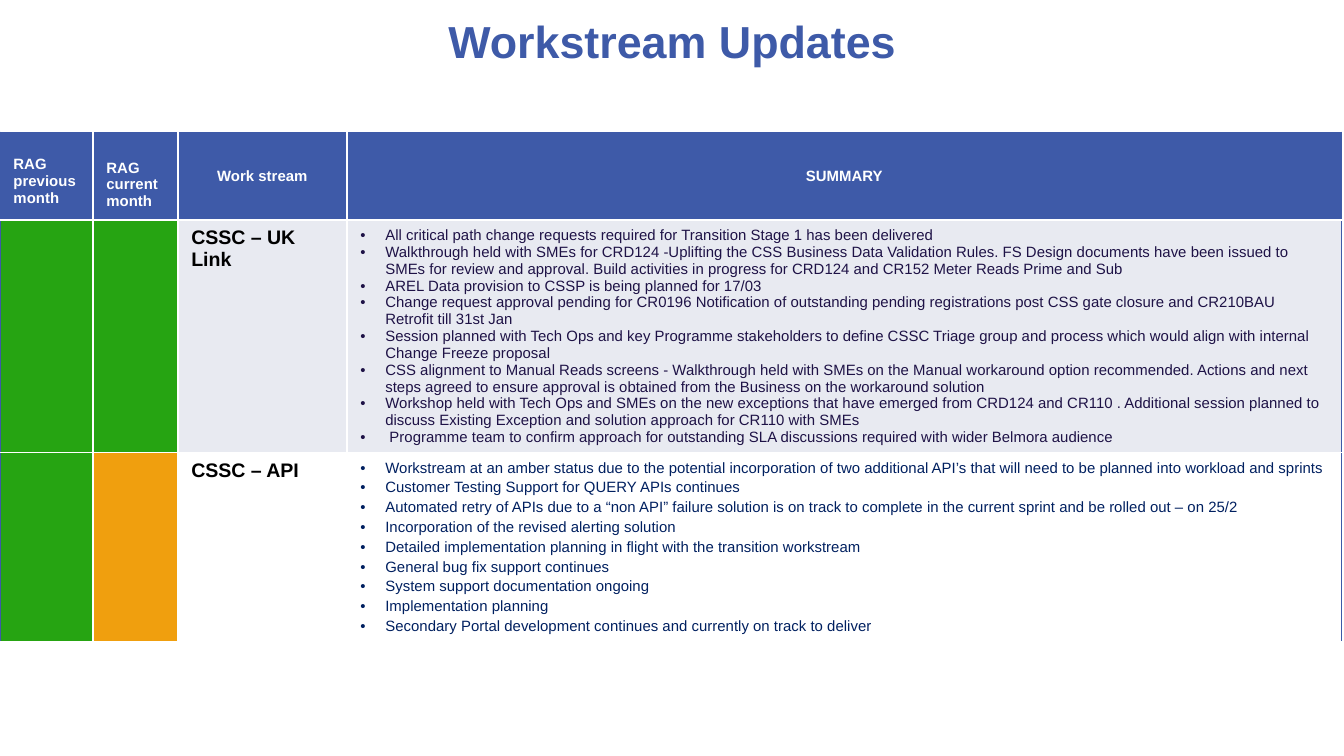
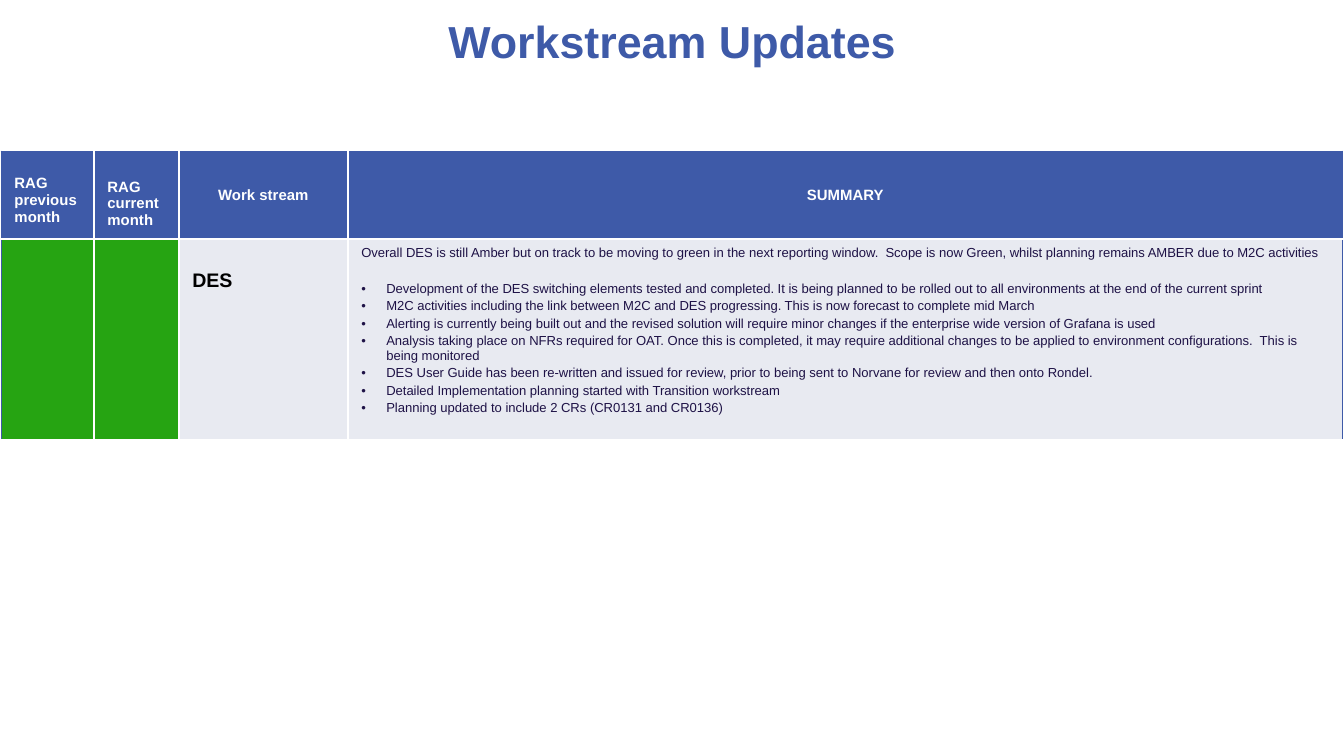
from dataclasses import dataclass

from lxml import etree
from pptx import Presentation
from pptx.dml.color import RGBColor
from pptx.enum import text
from pptx.oxml import ns
from pptx.util import Pt

TITLE = "Workstream Updates"
HEADINGS = ["RAG previous month", "RAG\ncurrent month", "Work stream", "SUMMARY"]

SLIDES = [
    {
        "corner": (0, 132),
        "rows": [
            {
                "height": 232, "rag": ("green", "green"), "name": "CSSC – UK Link",
                "fill": "band", "colour": "ink", "size": 8, "gap": 0,
                "bullets": [
                    "All critical path change requests required for Transition Stage 1 has been delivered",
                    "Walkthrough held with SMEs for CRD124 -Uplifting the CSS Business Data Validation Rules. "
                    "FS Design documents have been issued to SMEs for review and approval. "
                    "Build activities in progress for CRD124 and CR152 Meter Reads Prime and Sub",
                    "AREL Data provision to CSSP is being planned for 17/03",
                    "Change request approval pending for CR0196 Notification of outstanding pending "
                    "registrations post CSS gate closure and CR210BAU Retrofit till 31st Jan",
                    "Session planned with Tech Ops and key Programme stakeholders to define CSSC Triage "
                    "group and process which would align with internal Change Freeze proposal",
                    "CSS alignment to Manual Reads screens - Walkthrough held with SMEs on the Manual "
                    "workaround option recommended. Actions and next steps agreed to ensure approval "
                    "is obtained from the Business on the workaround solution",
                    "Workshop held with Tech Ops and SMEs on the new exceptions that have emerged from "
                    "CRD124 and CR110 . Additional session planned to discuss Existing Exception and "
                    "solution approach for CR110 with SMEs",
                    " Programme team to confirm approach for outstanding SLA discussions required "
                    "with wider Belmora audience",
                ],
            },
            {
                "height": 189, "rag": ("green", "amber"), "name": "CSSC – API",
                "fill": "white", "colour": "navy", "size": 8, "gap": 1.6,
                "bullets": [
                    "Workstream at an amber status due to the potential incorporation of two additional "
                    "API’s that will need to be planned into workload and sprints",
                    "Customer Testing Support for QUERY APIs continues",
                    "Automated retry of APIs due to a “non API” failure solution is on track to complete "
                    "in the current sprint and be rolled out – on 25/2",
                    "Incorporation of the revised alerting solution",
                    "Detailed implementation planning in flight with the transition workstream",
                    "General bug fix support continues",
                    "System support documentation ongoing",
                    "Implementation planning",
                    "Secondary Portal development continues and currently on track to deliver",
                ],
            },
        ],
    },
    {
        "corner": (1, 151),
        "rows": [
            {
                "height": 201, "rag": ("green", "green"), "name": "DES", "name_top": 31,
                "fill": "band", "colour": "ink", "size": 7, "gap": 1.6,
                "intro": "Overall DES is still Amber but on track to be moving to green in the next "
                         "reporting window.  Scope is now Green, whilst planning remains AMBER due to "
                         "M2C activities",
                "bullets": [
                    "Development of the DES switching elements tested and completed. It is being planned "
                    "to be rolled out to all environments at the end of the current sprint",
                    "M2C activities including the link between M2C and DES progressing. "
                    "This is now forecast to complete mid March",
                    "Alerting is currently being built out and the revised solution will require minor "
                    "changes if the enterprise wide version of Grafana is used",
                    "Analysis taking place on NFRs required for OAT. Once this is completed, it may "
                    "require additional changes to be applied to environment configurations.  "
                    "This is being monitored",
                    "DES User Guide has been re-written and issued for review, prior to being sent to "
                    "Norvane for review and then onto Rondel.",
                    "Detailed Implementation planning started with Transition workstream",
                    "Planning updated to include 2 CRs (CR0131 and CR0136)",
                ],
            },
        ],
    },
]


@dataclass(frozen=True)
class Theme:
    font: str = "Arial"
    blue: str = "3E5AA8"
    white: str = "FFFFFF"
    black: str = "000000"
    green: str = "26A412"
    amber: str = "F09F0E"
    band: str = "E8EAF1"
    ink: str = "1E1246"
    navy: str = "002060"
    title_size: float = 24
    heading_size: float = 8
    name_size: float = 10.5
    intro_gap: float = 11.2
    thin: float = 0.5
    thick: float = 1

    def rgb(self, name):
        return RGBColor.from_string(getattr(self, name))


THEME = Theme()
PAGE = (1344, 756)
TITLE_BOX = (67, 0, 1210, 82)
COLUMNS = [93, 85, 169, 995]
HEADER_HEIGHT = 88
HEADING_TOP = 24
CELL_TOP = 7
BULLET_INDENT = 25


def px(count):
    return round(count * 914400 / 134.4)


def write(para, words, *, size, colour, bold=False, align=None, bulleted=False, before=0):
    if bulleted:
        props = para._p.get_or_add_pPr()
        props.set("marL", str(px(BULLET_INDENT)))
        props.set("indent", str(-px(BULLET_INDENT)))
        etree.SubElement(props, ns.qn("a:buFont")).set("typeface", THEME.font)
        etree.SubElement(props, ns.qn("a:buChar")).set("char", "•")
    if align is not None:
        para.alignment = align
    para.space_before = Pt(before)
    span = para.add_run()
    span.text = words
    span.font.name = THEME.font
    span.font.size = Pt(size)
    span.font.bold = bold
    span.font.color.rgb = THEME.rgb(colour)


def next_paragraph(frame):
    """Return the empty first paragraph, or a new one once it holds text."""
    return frame.add_paragraph() if frame.text else frame.paragraphs[0]


def style_cell(cell, fill, edges, top=CELL_TOP):
    """Draw edges, a dict of side to (colour, points), then fill the cell."""
    props = cell._tc.get_or_add_tcPr()
    for side in "LRTB":
        if side in edges:
            colour, width = edges[side]
            line = etree.SubElement(props, ns.qn(f"a:ln{side}"), w=str(Pt(width)))
            solid = etree.SubElement(line, ns.qn("a:solidFill"))
            etree.SubElement(solid, ns.qn("a:srgbClr"), val=getattr(THEME, colour))
    cell.fill.solid()
    cell.fill.fore_color.rgb = THEME.rgb(fill)
    cell.margin_top = px(top)


def fill_header(table):
    outer, inner = ("blue", THEME.thin), ("white", THEME.thick)
    last = len(HEADINGS) - 1
    for column, heading in enumerate(HEADINGS):
        cell = table.cell(0, column)
        is_rag = column < 2
        edges = {"T": outer, "B": inner}
        if column == 0:
            edges["L"] = outer
        if column == last:
            edges["R"] = outer
        style_cell(cell, "blue", edges, HEADING_TOP if is_rag else CELL_TOP)
        if column:
            cell.vertical_anchor = text.MSO_ANCHOR.MIDDLE
        for words in heading.split("\n"):
            write(next_paragraph(cell.text_frame), words, size=THEME.heading_size,
                  colour="white", bold=True,
                  align=text.PP_ALIGN.LEFT if is_rag else text.PP_ALIGN.CENTER)


def fill_row(table, index, row):
    outer, inner = ("blue", THEME.thin), ("white", THEME.thick)
    fills = [*row["rag"], row["fill"], row["fill"]]
    tops = [CELL_TOP, CELL_TOP, row.get("name_top", CELL_TOP), CELL_TOP]
    cells = [table.cell(index, column) for column in range(len(fills))]
    for cell, fill, top in zip(cells, fills, tops):
        edges = dict.fromkeys("LRTB", inner)
        if cell is cells[0]:
            edges["L"] = outer
        if cell is cells[-1]:
            edges["R"] = outer
        style_cell(cell, fill, edges, top)

    write(cells[2].text_frame.paragraphs[0], row["name"],
          size=THEME.name_size, colour="black", bold=True)
    frame = cells[3].text_frame
    look = {"size": row["size"], "colour": row["colour"]}
    before = 0
    if "intro" in row:
        write(frame.paragraphs[0], row["intro"], **look)
        before = THEME.intro_gap
    for words in row["bullets"]:
        write(next_paragraph(frame), words, bulleted=True, before=before, **look)
        before = row["gap"]


def add_title(page):
    box = page.shapes.title
    box.left, box.top, box.width, box.height = map(px, TITLE_BOX)
    box.text_frame.vertical_anchor = text.MSO_ANCHOR.MIDDLE
    write(box.text_frame.paragraphs[0], TITLE, size=THEME.title_size, colour="blue",
          bold=True, align=text.PP_ALIGN.CENTER)


def add_status_table(page, corner, rows):
    heights = [HEADER_HEIGHT] + [row["height"] for row in rows]
    frame = page.shapes.add_table(len(heights), len(COLUMNS), *map(px, corner),
                                  px(sum(COLUMNS)), px(sum(heights)))
    table = frame.table
    table.first_row = table.horz_banding = False
    for column, width in zip(table.columns, COLUMNS):
        column.width = px(width)
    for line, height in zip(table.rows, heights):
        line.height = px(height)
    fill_header(table)
    for index, row in enumerate(rows, start=1):
        fill_row(table, index, row)


def main():
    deck = Presentation()
    deck.slide_width, deck.slide_height = map(px, PAGE)
    title_only = deck.slide_layouts[5]
    for content in SLIDES:
        page = deck.slides.add_slide(title_only)
        add_title(page)
        add_status_table(page, content["corner"], content["rows"])
    deck.save("out.pptx")


if __name__ == "__main__":
    main()
